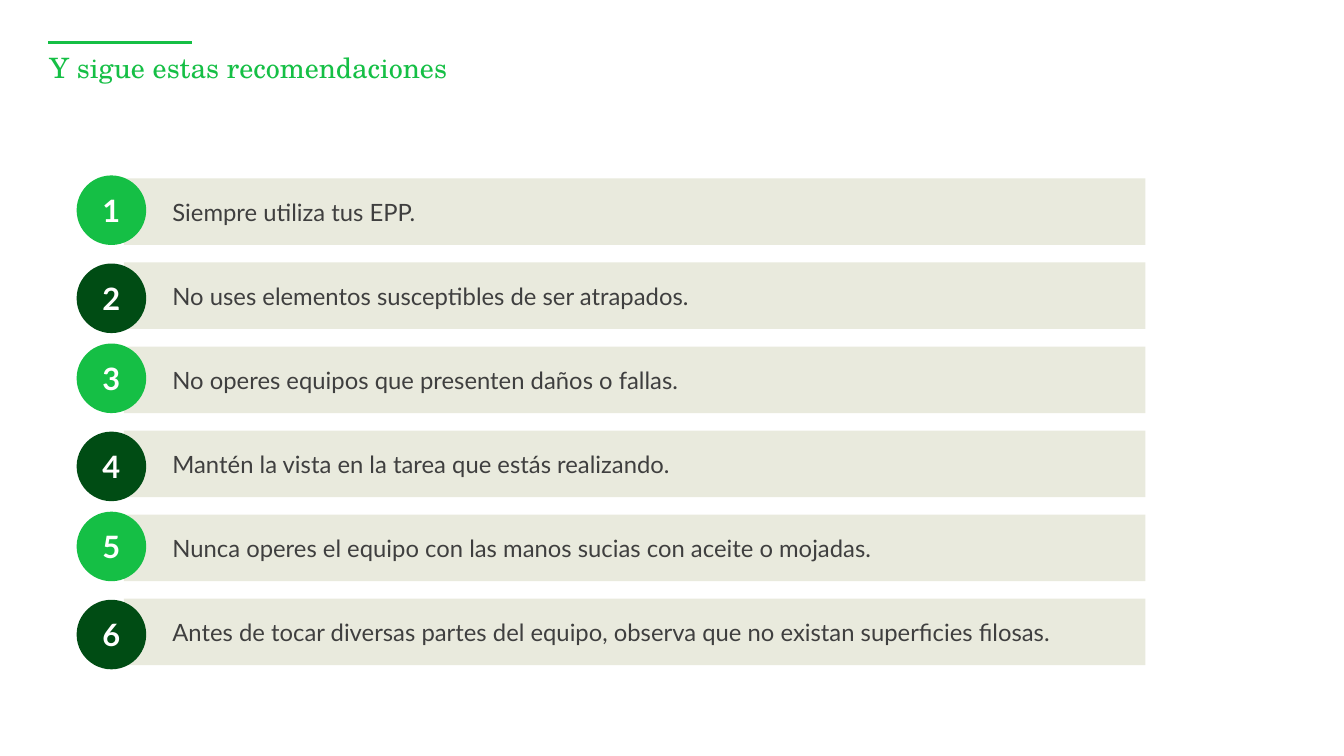
from collections import namedtuple

from lxml.etree import SubElement
from pptx import Presentation
from pptx.dml.color import RGBColor
from pptx.enum.shapes import MSO_CONNECTOR, MSO_SHAPE
from pptx.enum.text import MSO_ANCHOR, PP_ALIGN
from pptx.oxml.ns import qn
from pptx.util import Inches, Pt

GREEN = RGBColor(0x15, 0xBF, 0x45)
DARK_GREEN = RGBColor(0x00, 0x4C, 0x14)
BEIGE = RGBColor(0xE9, 0xEA, 0xDD)
GREY = RGBColor(0x3F, 0x3F, 0x3F)
WHITE = RGBColor(0xFF, 0xFF, 0xFF)

# The slide is a grid of square cells, ten to the inch.
CELL = Inches(0.1)
COLUMNS, ROWS = 133.3, 75

TITLE_FORMAT = {"name": "TeX Gyre Schola", "size": Pt(20), "bold": False}
NUMBER_FORMAT = {"name": "Lato", "size": Pt(22), "bold": True}
ADVICE_FORMAT = {"name": "Lato", "size": Pt(17), "bold": False}

TITLE = "Y sigue estas recomendaciones"
RECOMMENDATIONS = [
    "Siempre utiliza tus EPP.",
    "No uses elementos susceptibles de ser atrapados.",
    "No operes equipos que presenten daños o fallas.",
    "Mantén la vista en la tarea que estás realizando.",
    "Nunca operes el equipo con las manos sucias con aceite o mojadas.",
    "Antes de tocar diversas partes del equipo, observa que no existan superficies filosas.",
]

Box = namedtuple("Box", "left top width height")


def cells(*lengths):
    return [round(length * CELL) for length in lengths]


def write(shape, text, font_format, color, align, anchor, left_inset=0):
    frame = shape.text_frame
    frame_format = {
        "margin_left": round(left_inset * CELL), "margin_top": 0,
        "margin_right": 0, "margin_bottom": 0,
        "word_wrap": True, "vertical_anchor": anchor,
    }
    for attribute, value in frame_format.items():
        setattr(frame, attribute, value)
    paragraph = frame.paragraphs[0]
    paragraph.alignment = align
    run = paragraph.add_run()
    run.text = text
    for attribute, value in font_format.items():
        setattr(run.font, attribute, value)
    run.font.color.rgb = color


def add_filled(slide, preset, box, color):
    shape = slide.shapes.add_shape(preset, *cells(*box))
    shape.shadow.inherit = False
    shape.fill.solid()
    shape.fill.fore_color.rgb = color
    shape.line.fill.background()
    return shape


def add_heading(slide, box):
    """Place the accent rule on the box's top edge and the title below it."""
    rule = slide.shapes.add_connector(
        MSO_CONNECTOR.STRAIGHT,
        *cells(box.left, box.top, box.left + 14.2, box.top))
    rule.line.color.rgb = GREEN
    rule.line.width = Pt(1.75)
    SubElement(rule._element.spPr, qn("a:effectLst"))

    title = slide.shapes.title
    title.left, title.top, title.width, title.height = cells(
        box.left + 0.1, box.top + 1.2, box.width - 0.1, box.height - 1.2)
    write(title, TITLE, TITLE_FORMAT, GREEN, PP_ALIGN.LEFT, MSO_ANCHOR.TOP)
    title.text_frame.paragraphs[0].line_spacing = 0.9


def add_recommendation(slide, box, number, advice):
    """Place a bar with a numbered circle over its left end."""
    odd = number % 2 == 1
    overhang, diameter = 4.7, 6.9
    bar = add_filled(
        slide, MSO_SHAPE.RECTANGLE,
        Box(box.left + overhang, box.top, box.width - overhang, box.height), BEIGE)
    write(bar, advice, ADVICE_FORMAT, GREY, PP_ALIGN.LEFT, MSO_ANCHOR.MIDDLE, 4.8)

    circle_top = box.top + (-0.3 if odd else 0.1)
    circle = add_filled(
        slide, MSO_SHAPE.OVAL, Box(box.left, circle_top, diameter, diameter),
        GREEN if odd else DARK_GREEN)
    write(circle, str(number), NUMBER_FORMAT, WHITE, PP_ALIGN.CENTER, MSO_ANCHOR.MIDDLE)


def add_recommendations(slide, box):
    bar_height = 6.6
    pitch = (box.height - bar_height) / (len(RECOMMENDATIONS) - 1)
    for index, advice in enumerate(RECOMMENDATIONS):
        row = Box(box.left, box.top + index * pitch, box.width, bar_height)
        add_recommendation(slide, row, index + 1, advice)


def main():
    presentation = Presentation()
    presentation.slide_width, presentation.slide_height = cells(COLUMNS, ROWS)
    slide = presentation.slides.add_slide(presentation.slide_layouts[5])
    add_heading(slide, Box(4.8, 4.2, 108, 6.9))
    add_recommendations(slide, Box(7.6, 17.7, 106, 48.3))
    presentation.save("out.pptx")


if __name__ == "__main__":
    main()
